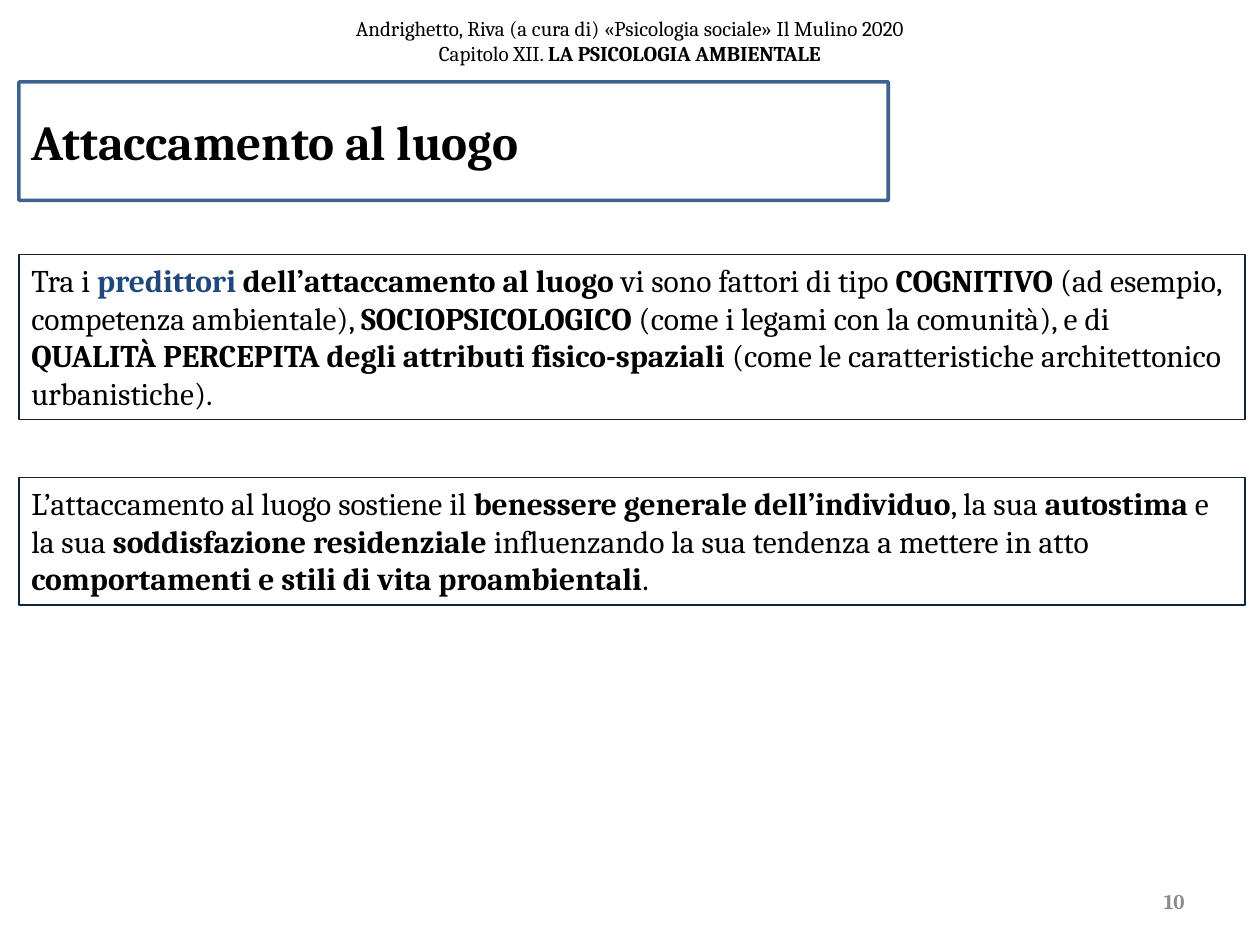
from lxml import etree
from pptx import Presentation
from pptx.dml.color import RGBColor
from pptx.enum.text import MSO_ANCHOR, PP_ALIGN
from pptx.oxml.ns import qn
from pptx.util import Inches, Pt

LEFT, CENTER, RIGHT = PP_ALIGN.LEFT, PP_ALIGN.CENTER, PP_ALIGN.RIGHT
TOP, MIDDLE = MSO_ANCHOR.TOP, MSO_ANCHOR.MIDDLE
FONT = "Cambria"
COLORS = {"text": "000000", "accent": "1F497D", "border": "0F243E", "number": "8C8C8C"}
TITLE_ONLY = 5


def color(name):
    return RGBColor.from_string(COLORS[name])


def write(shape, lines, size, align=LEFT, anchor=MIDDLE, text_color="text"):
    """Fill the shape with one paragraph; each line lists (text, style) runs."""
    frame = shape.text_frame
    frame.word_wrap = True
    frame.vertical_anchor = anchor
    paragraph = frame.paragraphs[0]
    paragraph.alignment = align
    paragraph.font.name = FONT
    paragraph.font.size = Pt(size)
    paragraph.font.color.rgb = color(text_color)
    for index, runs in enumerate(lines):
        if index:
            paragraph.add_line_break()
        for text, style in runs:
            run = paragraph.add_run()
            run.text = text
            run.font.bold = style != "plain"
            if style == "accent":
                run.font.color.rgb = color("accent")


presentation = Presentation()
presentation.slide_width = Inches(10)
presentation.slide_height = Inches(7.5)
slide = presentation.slides.add_slide(presentation.slide_layouts[TITLE_ONLY])

# Running header and page number
header = slide.shapes.add_textbox(Inches(0), Inches(-0.11), Inches(10), Inches(0.87))
write(header, [
    [("Andrighetto, Riva (a cura di) «Psicologia sociale» Il Mulino 2020", "plain")],
    [("Capitolo XII. ", "plain"), ("LA PSICOLOGIA AMBIENTALE", "bold")],
], 12, CENTER)

page_number = slide.shapes.add_textbox(Inches(7.17), Inches(6.95), Inches(2.33), Inches(0.4))
write(page_number, [[("10", "bold")]], 12, RIGHT, text_color="number")

# Title in a slightly transparent frame
title = slide.shapes.title
title.left, title.top = Inches(0.15), Inches(0.65)
title.width, title.height = Inches(6.9), Inches(0.94)
title.line.color.rgb = color("accent")
title.line.width = Pt(2)
line_color = title.line.fill._xPr.find(".//" + qn("a:srgbClr"))
etree.SubElement(line_color, qn("a:alpha"), val="86000")
write(title, [[("Attaccamento al luogo", "bold")]], 28)

# Framed statements
statements = [
    (2.02, 1.31, [
        ("Tra i ", "plain"),
        ("predittori", "accent"),
        (" dell’attaccamento al luogo ", "bold"),
        ("vi sono fattori di tipo ", "plain"),
        ("COGNITIVO", "bold"),
        (" (ad esempio, competenza ambientale), ", "plain"),
        ("SOCIOPSICOLOGICO", "bold"),
        (" (come i legami con la comunità), e di ", "plain"),
        ("QUALITÀ PERCEPITA degli attributi fisico-spaziali ", "bold"),
        ("(come le caratteristiche architettonico urbanistiche).", "plain"),
    ]),
    (3.79, 1.01, [
        ("L’attaccamento al luogo sostiene il ", "plain"),
        ("benessere generale dell’individuo", "bold"),
        (", la sua ", "plain"),
        ("autostima", "bold"),
        (" e la sua ", "plain"),
        ("soddisfazione residenziale ", "bold"),
        ("influenzando la sua tendenza a mettere in atto ", "plain"),
        ("comportamenti e stili di vita proambientali", "bold"),
        (".", "plain"),
    ]),
]
for top, height, runs in statements:
    box = slide.shapes.add_textbox(Inches(0.15), Inches(top), Inches(9.73), Inches(height))
    box.line.color.rgb = color("border")
    box.line.width = Pt(1)
    write(box, [runs], 18, anchor=TOP)

presentation.save("out.pptx")
